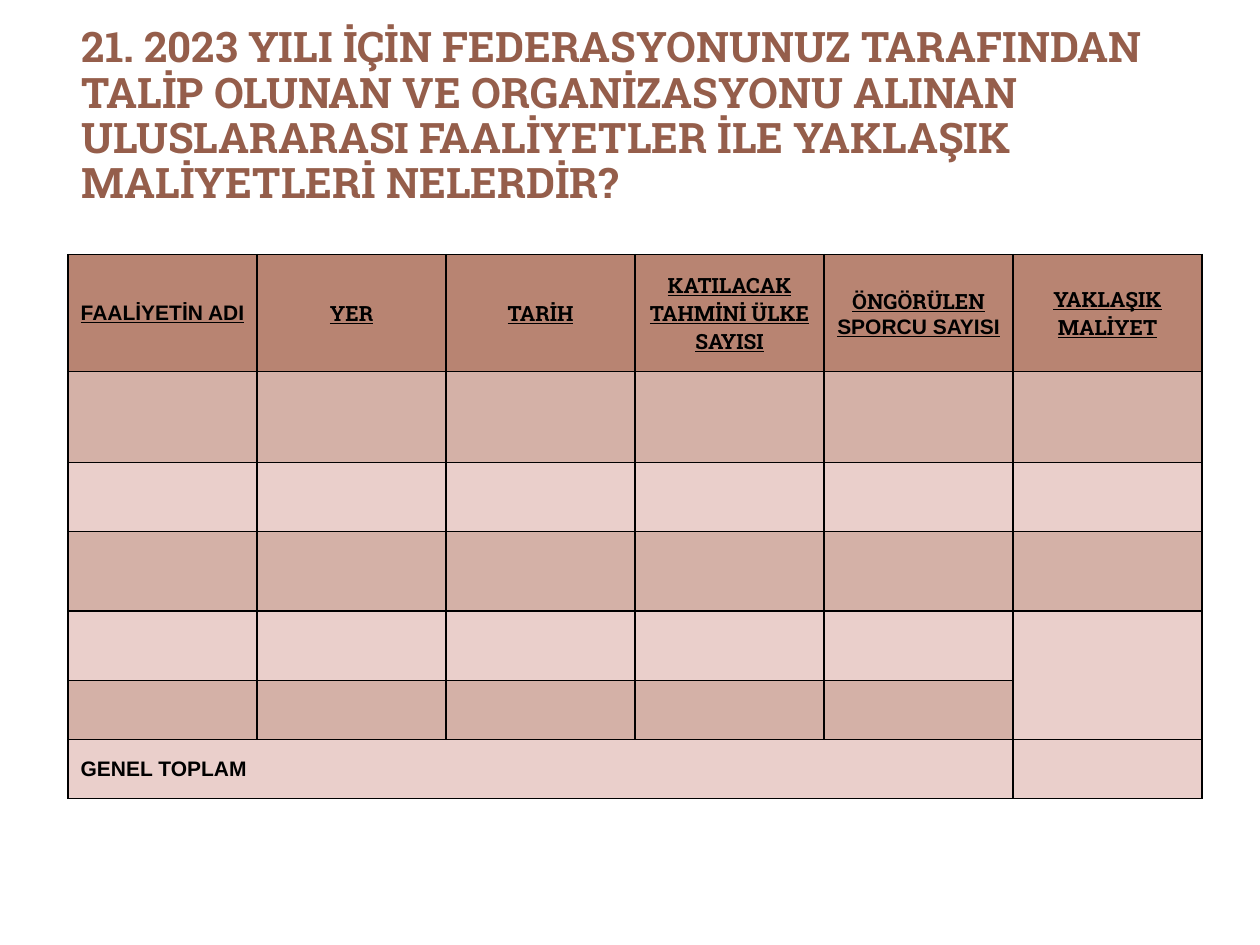
import pptx
import pptx.dml.color
import pptx.enum.text
import pptx.oxml.ns
import pptx.util
from lxml import etree
from pptx.util import Inches

SERIF = "Roboto Slab"
SANS = "Arial"
TITLE = (
    "21. 2023 YILI İÇİN FEDERASYONUNUZ TARAFINDAN TALİP OLUNAN VE "
    "ORGANİZASYONU ALINAN ULUSLARARASI FAALİYETLER İLE YAKLAŞIK "
    "MALİYETLERİ NELERDİR?"
)
HEADINGS = [
    [("FAALİYETİN ADI", SANS)],
    [("YER", SERIF)],
    [("TARİH", SERIF)],
    [("KATILACAK TAHMİNİ ÜLKE SAYISI", SERIF)],
    [("ÖNGÖRÜLEN ", SERIF), ("SPORCU SAYISI", SANS)],
    [("YAKLAŞIK MALİYET", SERIF)],
]
ROW_HEIGHTS = [0.93, 0.72, 0.55, 0.63, 0.55, 0.47, 0.47]
HEADER_FILL = "B88472"
BAND_FILLS = ["EACFCB", "D4B1A7"]


def color(value):
    return pptx.dml.color.RGBColor.from_string(value)


def style_run(span, font_name, size, value, underline=False):
    font = span.font
    font.name = font_name
    font.size = pptx.util.Pt(size)
    font.bold = True
    font.underline = underline
    font.color.rgb = color(value)


def add_title(page, left, top, width, height):
    box = page.shapes.title
    box.left, box.top, box.width, box.height = left, top, width, height
    frame = box.text_frame
    frame.text = TITLE
    frame.word_wrap = True
    frame.auto_size = pptx.enum.text.MSO_AUTO_SIZE.NONE
    frame.vertical_anchor = pptx.enum.text.MSO_ANCHOR.TOP
    para = frame.paragraphs[0]
    para.alignment = pptx.enum.text.PP_ALIGN.LEFT
    para.line_spacing = 0.9
    style_run(para.runs[0], SERIF, 24, "955E4B")


def style_cell(cell, fill):
    cell.fill.solid()
    cell.fill.fore_color.rgb = color(fill)
    cell.vertical_anchor = pptx.enum.text.MSO_ANCHOR.MIDDLE
    properties = cell._tc.get_or_add_tcPr()
    qn = pptx.oxml.ns.qn
    for position, side in enumerate(["a:lnL", "a:lnR", "a:lnT", "a:lnB"]):
        border = etree.Element(qn(side), w=str(pptx.util.Pt(1)))
        solid = etree.SubElement(border, qn("a:solidFill"))
        etree.SubElement(solid, qn("a:srgbClr"), val="000000")
        properties.insert(position, border)


def write_cell(cell, parts, alignment, underline):
    para = cell.text_frame.paragraphs[0]
    para.alignment = alignment
    para.space_before = pptx.util.Pt(2.4)
    for text, font_name in parts:
        span = para.add_run()
        span.text = text
        style_run(span, font_name, 12, "000000", underline)


def add_cost_table(page, left, top, width, height):
    rows, columns = len(ROW_HEIGHTS), len(HEADINGS)
    table = page.shapes.add_table(rows, columns, left, top, width, height).table
    for column in table.columns:
        column.width = width // columns
    for index, row in enumerate(table.rows):
        row.height = Inches(ROW_HEIGHTS[index])
        fill = BAND_FILLS[index % 2] if index else HEADER_FILL
        for cell in row.cells:
            style_cell(cell, fill)
    align = pptx.enum.text.PP_ALIGN
    for index, parts in enumerate(HEADINGS):
        write_cell(table.cell(0, index), parts, align.CENTER, True)
    last_row, last_column = rows - 1, columns - 1
    table.cell(last_row - 2, last_column).merge(table.cell(last_row - 1, last_column))
    table.cell(last_row, 0).merge(table.cell(last_row, last_column - 1))
    write_cell(table.cell(last_row, 0), [("GENEL TOPLAM", SANS)], align.LEFT, False)


def main():
    deck = pptx.Presentation()
    deck.slide_width, deck.slide_height = Inches(10), Inches(7.5)
    page = deck.slides.add_slide(deck.slide_layouts[5])
    add_title(page, Inches(0.55), Inches(0.16), Inches(9), Inches(1.25))
    add_cost_table(page, Inches(0.54), Inches(2.02), Inches(9), Inches(sum(ROW_HEIGHTS)))
    deck.save("out.pptx")


if __name__ == "__main__":
    main()
